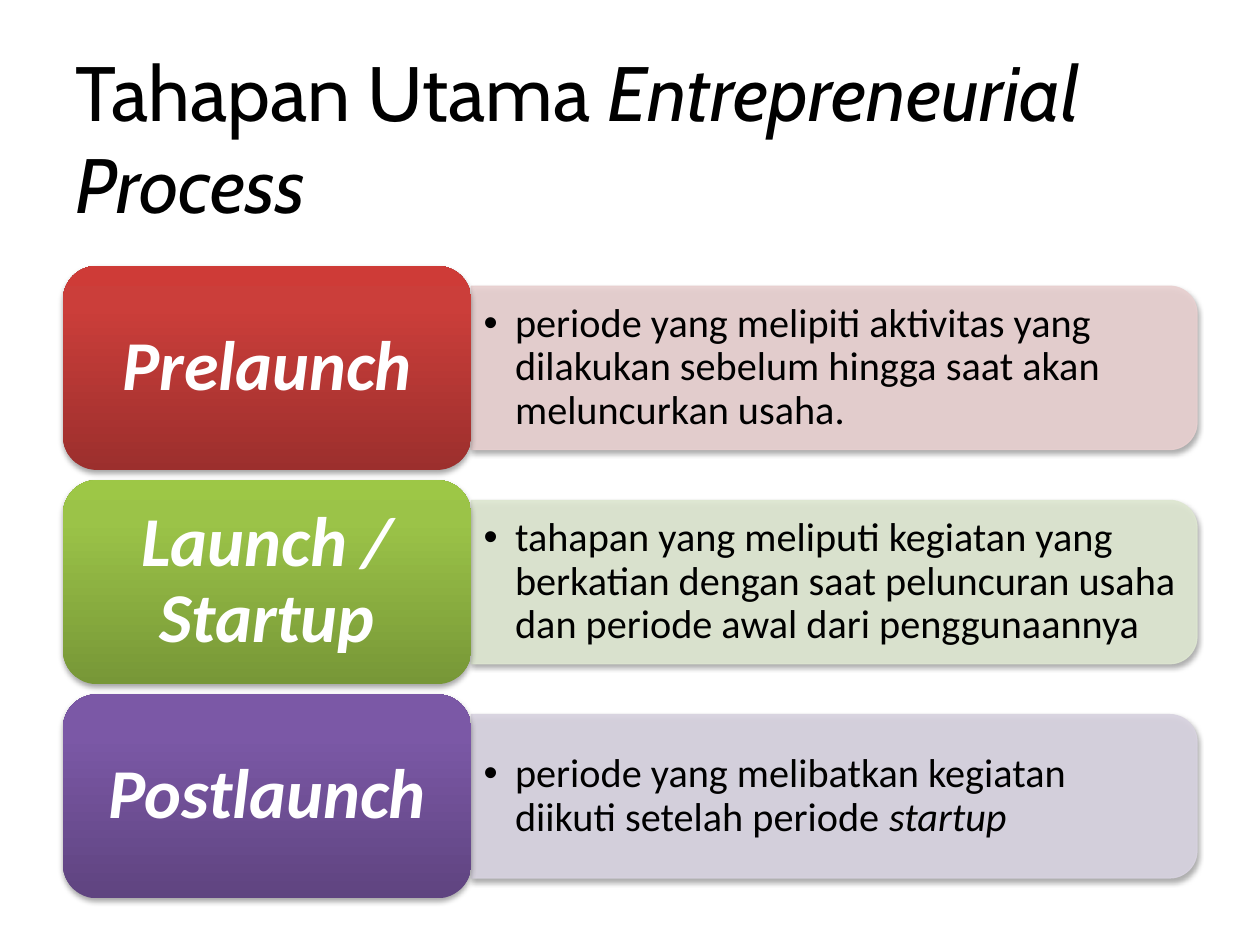
from lxml import etree
from pptx import Presentation
from pptx import util as u
from pptx.dml.color import RGBColor
from pptx.enum import shapes, text
from pptx.oxml import ns

WIDTH, HEIGHT = 10, 7.5
LEFT, TOP, ROW_WIDTH = 0.5, 2.11, 9
ROW_HEIGHT, ROW_PITCH = 1.62, 1.7
LABEL_SHARE, PANEL_SHARE, BODY_SHARE = 0.36, 0.8, 0.72

STAGES = [
    ([("Prelaunch", True)],
     [("periode yang melipiti aktivitas yang dilakukan sebelum hingga saat akan "
       "meluncurkan usaha.", False)],
     ["9C2F2D", "CB3E3A", "CE3B37"], "E8D0D0"),
    ([("Launch / Startup", True)],
     [("tahapan yang meliputi kegiatan yang berkatian dengan saat peluncuran usaha "
       "dan periode awal dari penggunaannya", False)],
     ["779737", "9BC348", "9DC746"], "DEE7D1"),
    ([("Postlaunch", True)],
     [("periode yang melibatkan kegiatan diikuti setelah periode ", False),
      ("startup", True)],
     ["5F4480", "7B58A6", "7C57A8"], "D8D3E0"),
]


def color(value):
    """Turn a hex string into a colour."""
    return RGBColor.from_string(value)


def add_element(parent, tag, **attributes):
    """Append a drawing element and return it."""
    element = etree.SubElement(parent, ns.qn(f"a:{tag}"))
    for name, value in attributes.items():
        element.set(name, str(value))
    return element


def add_text(slide, box, runs, *, size, font="Calibri", fill="000000", bold=False,
             align=text.PP_ALIGN.LEFT, spacing=None, insets=(0.1, 0.05), bullet=False):
    """Add a wrapped, vertically centred text box of (text, italic) runs."""
    shape = slide.shapes.add_textbox(*map(u.Inches, box))
    frame = shape.text_frame
    frame.word_wrap = True
    frame.vertical_anchor = text.MSO_ANCHOR.MIDDLE
    frame.margin_left = frame.margin_right = u.Inches(insets[0])
    frame.margin_top = frame.margin_bottom = u.Inches(insets[1])
    paragraph = frame.paragraphs[0]
    paragraph.alignment = align
    if spacing:
        paragraph.line_spacing = spacing
    if bullet:
        paragraph.level = 1
        properties = paragraph._p.get_or_add_pPr()
        properties.set("marL", str(u.Inches(0.25)))
        properties.set("indent", str(u.Inches(-0.25)))
        add_element(properties, "buFont", typeface="Arial")
        add_element(properties, "buChar", char="•")
    for content, italic in runs:
        run = paragraph.add_run()
        run.text = content
        run.font.name, run.font.size = font, u.Pt(size)
        run.font.bold, run.font.italic = bold, italic
        run.font.color.rgb = color(fill)


def add_card(slide, kind, box):
    """Add a shape with a soft shadow straight below it."""
    shape = slide.shapes.add_shape(kind, *map(u.Inches, box))
    shape.shadow.inherit = False
    effects = shape._element.spPr.find(ns.qn("a:effectLst"))
    shadow = add_element(effects, "outerShdw", blurRad=u.Pt(3.1), dist=u.Pt(1.8),
                         dir=5400000, rotWithShape=0)
    add_element(add_element(shadow, "srgbClr", val="000000"), "alpha", val=35000)
    return shape


def add_panel(slide, box, fill):
    """Add a translucent panel rounded on its right side, with its bullet area."""
    left, top, width, height = box
    turned = (left + (width - height) / 2, top + (height - width) / 2, height, width)
    panel = add_card(slide, shapes.MSO_SHAPE.ROUND_2_SAME_RECTANGLE, turned)
    panel.rotation = 90
    panel.line.width = u.Pt(0.75)
    for paint in (panel.fill, panel.line.fill):
        paint.solid()
        paint.fore_color.rgb = color(fill)
    for value in panel._element.spPr.iter(ns.qn("a:srgbClr")):
        if value.get("val") == fill:
            add_element(value, "alpha", val=90000)


def add_label(slide, box, runs, stops):
    """Add a gradient label, darkest at its foot, with its centred name."""
    label = add_card(slide, shapes.MSO_SHAPE.ROUNDED_RECTANGLE, box)
    label.line.fill.background()
    label.fill.gradient()
    label.fill.gradient_angle = 90
    stop_list = label._element.spPr.find(".//" + ns.qn("a:gsLst"))
    stop_list.clear()
    for position, value in zip((0, 80000, 100000), stops):
        add_element(add_element(stop_list, "gs", pos=position), "srgbClr", val=value)
    left, top, width, height = box
    inner = (left + 0.08, top + 0.08, width - 0.16, height - 0.16)
    add_text(slide, inner, runs, size=40, fill="FFFFFF", bold=True, spacing=0.9,
             align=text.PP_ALIGN.CENTER, insets=(0.17, 0.08))


def add_stage(slide, box, name, description, stops, panel_fill):
    """Add one stage: the description panel and the label beside it."""
    left, top, width, height = box
    label_width = width * LABEL_SHARE
    panel_left, panel_width = left + label_width, width - label_width

    def centred(share, trim=0):
        """Give a box in the panel column with a share of the row height."""
        return (panel_left, top + height * (1 - share) / 2,
                panel_width - trim, height * share)

    add_panel(slide, centred(PANEL_SHARE), panel_fill)
    add_text(slide, centred(BODY_SHARE, 0.06), description, size=23, spacing=0.9,
             bullet=True)
    add_label(slide, (left, top, label_width, height), name, stops)


def main():
    """Build the slide and save it."""
    presentation = Presentation()
    presentation.slide_width = u.Inches(WIDTH)
    presentation.slide_height = u.Inches(HEIGHT)
    slide = presentation.slides.add_slide(presentation.slide_layouts[6])
    add_text(slide, (LEFT, 0.3, ROW_WIDTH, 1.57),
             [("Tahapan Utama ", False), ("Entrepreneurial Process", True)],
             size=44, font="Cabin")
    for index, stage in enumerate(STAGES):
        add_stage(slide, (LEFT, TOP + index * ROW_PITCH, ROW_WIDTH, ROW_HEIGHT), *stage)
    presentation.save("out.pptx")


if __name__ == "__main__":
    main()
